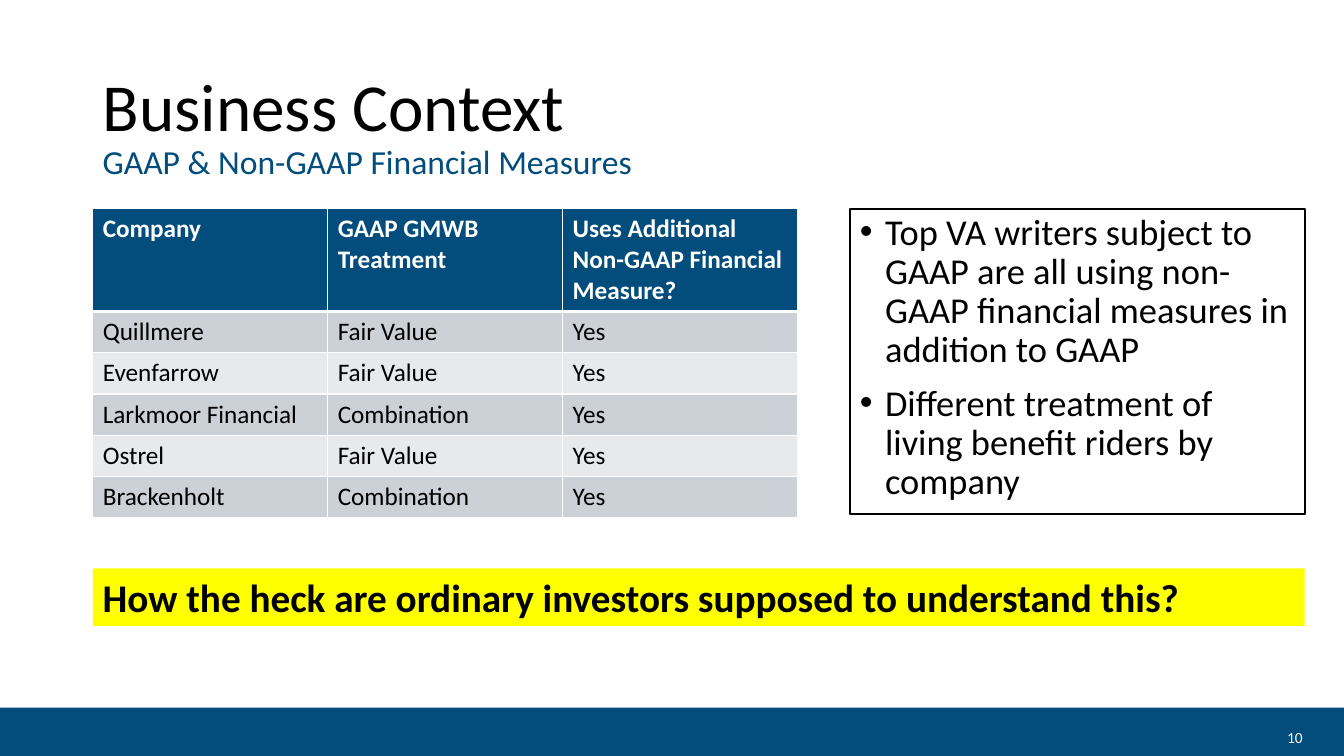
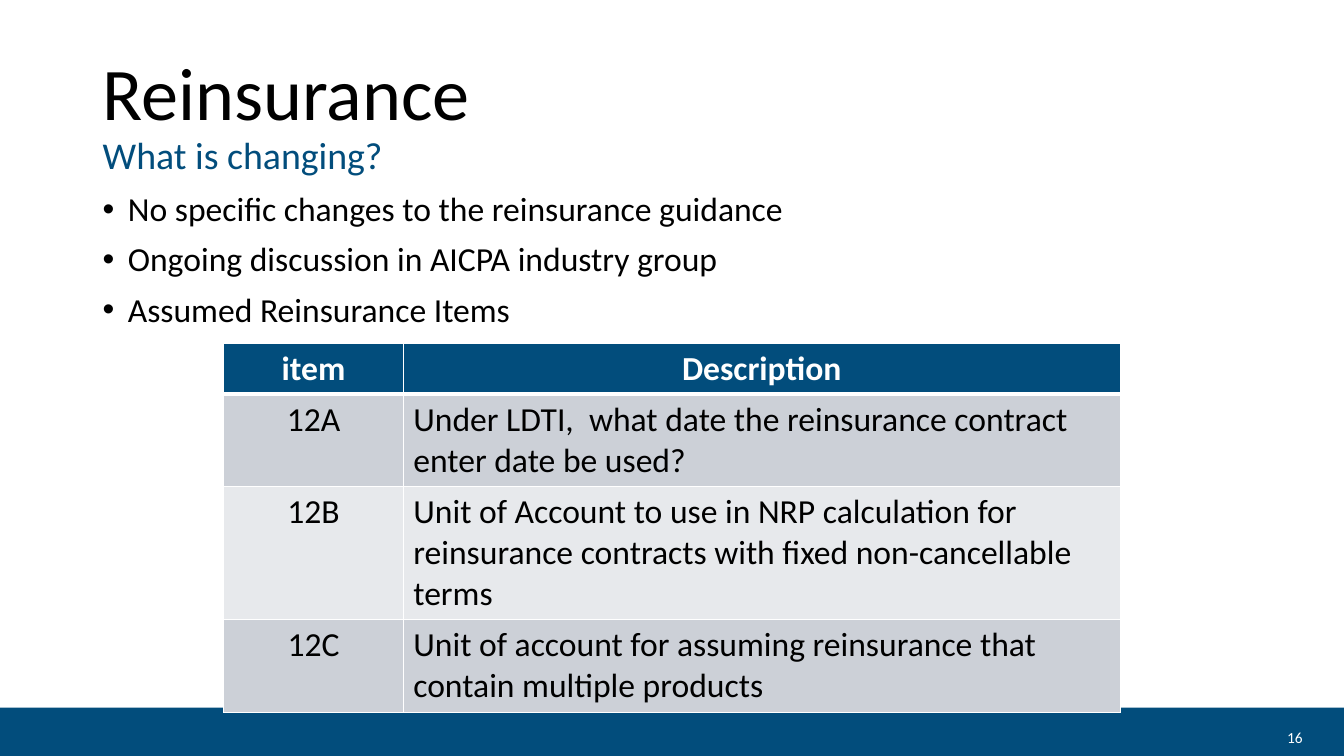
from pptx import Presentation
from pptx.dml.color import RGBColor
from pptx.enum.shapes import MSO_SHAPE
from pptx.enum.text import MSO_ANCHOR, PP_ALIGN
from pptx.oxml.ns import qn
from pptx.util import Inches, Pt
from lxml import etree

RECT = MSO_SHAPE.RECTANGLE
MIDDLE, TOP = MSO_ANCHOR.MIDDLE, MSO_ANCHOR.TOP
LEFT, CENTER, RIGHT = PP_ALIGN.LEFT, PP_ALIGN.CENTER, PP_ALIGN.RIGHT

NAVY = RGBColor(0x02, 0x4D, 0x7C)
BLACK = RGBColor(0, 0, 0)
WHITE = RGBColor(0xFF, 0xFF, 0xFF)
YELLOW = RGBColor(0xFF, 0xFF, 0)
BANDS = (RGBColor(0xCC, 0xD0, 0xD7), RGBColor(0xE7, 0xE9, 0xEC))
FONT = "Calibri"
MARGIN = 0.92
WIDE, HIGH = 13.33, 7.5
BAND_TOP = 7.02

MEASURES = [
    ("Company", "GAAP GMWB Treatment", "Uses Additional Non-GAAP Financial Measure?"),
    ("Quillmere", "Fair Value", "Yes"),
    ("Evenfarrow", "Fair Value", "Yes"),
    ("Larkmoor Financial", "Combination", "Yes"),
    ("Ostrel", "Fair Value", "Yes"),
    ("Brackenholt", "Combination", "Yes"),
]
ITEMS = [
    ("item", "Description"),
    ("12A", "Under LDTI,  what date the reinsurance contract enter date be used?"),
    ("12B", "Unit of Account to use in NRP calculation for reinsurance contracts "
            "with fixed non-cancellable terms"),
    ("12C", "Unit of account for assuming reinsurance that contain multiple products"),
]


def style(para, size, color=BLACK, bold=False, align=LEFT):
    para.alignment = align
    font = para.font
    font.name, font.size, font.bold = FONT, Pt(size), bold
    font.color.rgb = color


def add_rect(slide, box, fill=None, line=None):
    shape = slide.shapes.add_shape(RECT, *map(Inches, box))
    shape.shadow.inherit = False
    if fill is None:
        shape.fill.background()
    else:
        shape.fill.solid()
        shape.fill.fore_color.rgb = fill
    if line is None:
        shape.line.fill.background()
    else:
        shape.line.color.rgb = line
        shape.line.width = Pt(1.5)
    return shape


def add_box(slide, box):
    return slide.shapes.add_textbox(*map(Inches, box))


def set_frame(shape, anchor=TOP):
    frame = shape.text_frame
    frame.word_wrap = True
    frame.vertical_anchor = anchor
    return frame


def add_paras(frame, texts):
    """Write one paragraph per text and yield each of them."""
    for i, text in enumerate(texts):
        para = frame.add_paragraph() if i else frame.paragraphs[0]
        para.text = text
        yield para


def add_title(slide, box, title, topic, sizes):
    frame = set_frame(add_box(slide, box), MIDDLE)
    paras = add_paras(frame, (title, topic))
    for para, size, color in zip(paras, sizes, (BLACK, NAVY)):
        para.line_spacing = 0.9
        style(para, size, color)


def add_list(shape, texts, size):
    for i, para in enumerate(add_paras(set_frame(shape), texts)):
        para.line_spacing = 0.9
        if i:
            para.space_before = Pt(10)
        props = para._p.get_or_add_pPr()
        props.set("marL", str(Inches(0.25)))
        props.set("indent", str(-Inches(0.25)))
        etree.SubElement(props, qn("a:buFont"), typeface="Arial")
        etree.SubElement(props, qn("a:buChar"), char="•")
        style(para, size)


def set_edges(cell, top, bottom):
    """Draw white cell borders; top and bottom are widths in points."""
    props = cell._tc.get_or_add_tcPr()
    edges = (("L", 1), ("R", 1), ("T", top), ("B", bottom))
    for i, (side, width) in enumerate(edges):
        line = etree.Element(qn("a:ln" + side), w=str(Pt(width)))
        fill = etree.SubElement(line, qn("a:solidFill"))
        etree.SubElement(fill, qn("a:srgbClr"), val=str(WHITE))
        props.insert(i, line)


def add_grid(slide, left, top, cols, heights, rows, size, aligns, head=LEFT):
    shape = slide.shapes.add_table(
        len(rows), len(cols), Inches(left), Inches(top),
        Inches(sum(cols)), Inches(sum(heights)))
    table = shape.table
    table.horz_banding = False
    for col, width in zip(table.columns, cols):
        col.width = Inches(width)
    for r, texts in enumerate(rows):
        table.rows[r].height = Inches(heights[r])
        for c, text in enumerate(texts):
            cell = table.cell(r, c)
            cell.text = text
            cell.fill.solid()
            cell.fill.fore_color.rgb = BANDS[(r - 1) % 2] if r else NAVY
            set_edges(cell, 3 if r == 1 else 1, 1 if r else 3)
            para = cell.text_frame.paragraphs[0]
            if r:
                style(para, size, align=aligns[c])
            else:
                style(para, size, WHITE, True, head)


def add_slide(deck, number):
    """Add a blank slide with the footer band and its number."""
    slide = deck.slides.add_slide(deck.slide_layouts[6])
    add_rect(slide, (0, BAND_TOP, WIDE, HIGH - BAND_TOP), NAVY)
    frame = set_frame(add_box(slide, (12.31, 7.2, 0.71, 0.22)), MIDDLE)
    frame.text = str(number)
    style(frame.paragraphs[0], 11, WHITE, align=RIGHT)
    return slide


def add_context(deck):
    slide = add_slide(deck, 10)
    add_title(slide, (MARGIN, 0.46, 11.5, 1.61), "Business Context",
              "GAAP & Non-GAAP Financial Measures", (48, 24))
    add_list(add_rect(slide, (8.43, 2.07, 4.51, 3.03), line=BLACK), (
        "Top VA writers subject to GAAP are all using non-GAAP financial "
        "measures in addition to GAAP",
        "Different treatment of living benefit riders by company"), 26)
    add_grid(slide, MARGIN, 2.07, [2.33] * 3, [1.02] + [0.41] * 5,
             MEASURES, 18, [LEFT] * 3)
    frame = set_frame(add_rect(slide, (MARGIN, 5.64, 12.02, 0.57), YELLOW))
    frame.text = "How the heck are ordinary investors supposed to understand this?"
    style(frame.paragraphs[0], 28, bold=True)


def add_changes(deck):
    slide = add_slide(deck, 16)
    add_title(slide, (MARGIN, 0.46, 11.5, 1.4), "Reinsurance",
              "What is changing?", (53, 27))
    add_list(add_box(slide, (MARGIN, 1.86, 11.5, 4.61)), (
        "No specific changes to the reinsurance guidance",
        "Ongoing discussion in AICPA industry group",
        "Assumed Reinsurance Items"), 24)
    add_grid(slide, 2.22, 3.41, [1.78, 7.11], [0.5, 0.92, 1.32, 0.92],
             ITEMS, 24, [CENTER, LEFT], CENTER)


def main():
    deck = Presentation()
    deck.slide_width, deck.slide_height = Inches(WIDE), Inches(HIGH)
    add_context(deck)
    add_changes(deck)
    deck.save("out.pptx")


if __name__ == "__main__":
    main()
